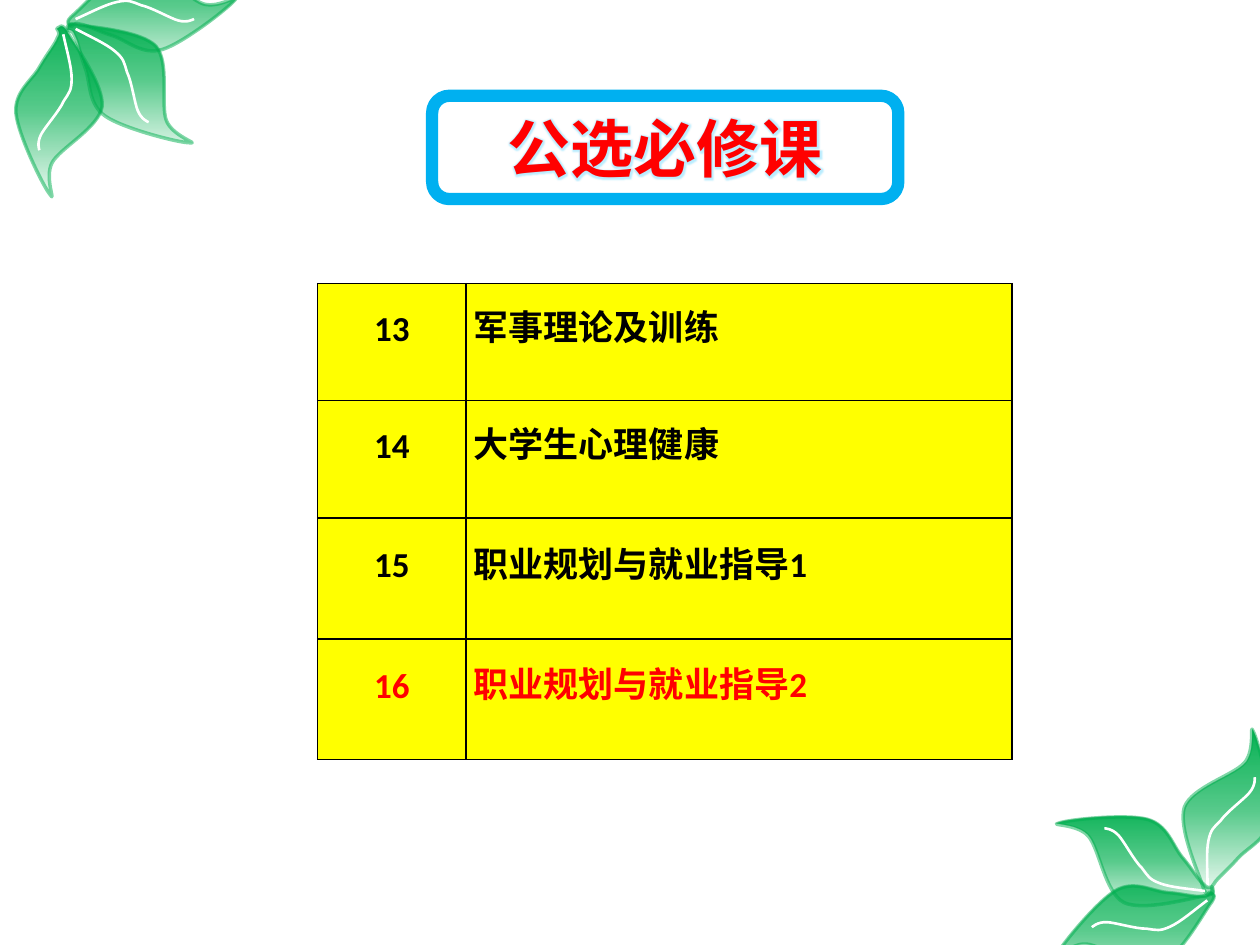
from math import cos, radians, sin

from lxml import etree
from pptx import Presentation
from pptx.dml.color import RGBColor
from pptx.enum.shapes import MSO_SHAPE
from pptx.enum.text import MSO_ANCHOR, MSO_AUTO_SIZE, PP_ALIGN
from pptx.oxml import parse_xml
from pptx.oxml.ns import nsdecls, qn
from pptx.util import Inches, Pt

ROUND = MSO_SHAPE.ROUNDED_RECTANGLE
MIDDLE = MSO_ANCHOR.MIDDLE
GROW = MSO_AUTO_SIZE.SHAPE_TO_FIT_TEXT
LEFT, CENTER = PP_ALIGN.LEFT, PP_ALIGN.CENTER

# Content
TITLE = "公选必修课"
ROWS = [
    ("13", "军事理论及训练", "black"),
    ("14", "大学生心理健康", "black"),
    ("15", "职业规划与就业指导1", "black"),
    ("16", "职业规划与就业指导2", "red"),
]
COLS = [1.18, 4.33]
HEIGHTS = [0.93, 0.93, 0.96, 0.96]
COLORS = {
    "black": "000000", "red": "FF0000", "white": "FFFFFF", "green": "00B050",
    "blue": "00B0F0", "yellow": "FFFF00", "glow": "8FE2FF",
}

# Leaf and vein in hundredths of an inch: size, start, then cubic curves
LEAF = ((76, 141), (19, 129), [
    (15, 117, 0, 83, 5, 67), (11, 51, 44, 42, 53, 32),
    (62, 22, 57, -1, 60, 7), (64, 14, 75, 59, 73, 76),
    (71, 93, 55, 99, 47, 108), (39, 117, 31, 123, 28, 128),
    (24, 132, 28, 135, 27, 135), (25, 135, 22, 140, 19, 129),
])
VEIN = ((40, 86), (1, 86), [
    (1, 72, 0, 59, 2, 50), (4, 41, 6, 40, 12, 34),
    (17, 27, 31, 17, 35, 12), (40, 6, 39, 0, 39, 0),
])
OFFSET = (0.04, 0.16)  # vein centre from leaf centre, before turning
# Centre x, centre y, turn in degrees
LEAVES = [
    (0.48, 0.88, 167.8), (1.05, 0.64, 118.1), (1.2, 0.05, 66.1),
    (9.73, 6.44, 359.6), (9.02, 7.38, 233), (9, 6.84, 278.1),
]


def color(name):
    return RGBColor.from_string(COLORS[name])


def curve(shapes, form, x, y, turn, line, width, closed):
    """Draw a curved outline centred on x, y."""
    (w, h), start, bends = form
    pen = shapes.build_freeform(0, 0, scale=Inches(0.01))
    pen.add_line_segments([(w, 0), (w, h), (0, h)])
    shape = pen.convert_to_shape()
    track = next(shape.element.iter(qn("a:path")))
    for step in list(track):
        track.remove(step)

    def add(tag, nums):
        step = etree.SubElement(track, qn(tag))
        for px, py in zip(nums[::2], nums[1::2]):
            etree.SubElement(step, qn("a:pt"), x=str(px), y=str(py))

    add("a:moveTo", start)
    for bend in bends:
        add("a:cubicBezTo", bend)
    if closed:
        add("a:close", ())
    shape.left, shape.top = Inches(x - w / 200), Inches(y - h / 200)
    shape.rotation = turn
    shape.shadow.inherit = False
    shape.fill.background()
    shape.line.color.rgb = color(line)
    shape.line.width = Pt(width)
    return shape


def fade(shape):
    """Green fill that fades downwards; the outline is half clear."""
    stops = "".join(
        f'<a:gs pos="{pos}"><a:srgbClr val="{COLORS["green"]}">'
        f'<a:alpha val="{alpha}"/></a:srgbClr></a:gs>'
        for pos, alpha in [(0, 100000), (50000, 65000), (100000, 0)])
    fill = parse_xml(
        f'<a:gradFill {nsdecls("a")} rotWithShape="0"><a:gsLst>{stops}</a:gsLst>'
        '<a:lin ang="5400000" scaled="0"/></a:gradFill>')
    props = shape.element.spPr
    props.replace(props.find(qn("a:noFill")), fill)
    tint = props.find(qn("a:ln")).find(".//" + qn("a:srgbClr"))
    etree.SubElement(tint, qn("a:alpha"), val="50000")


def style(para, size, font, name, align):
    para.alignment = align
    run = para.runs[0]
    run.font.size, run.font.name, run.font.bold = Pt(size), font, True
    run.font.color.rgb = color(name)
    return run


def border(cell):
    props = cell._tc.get_or_add_tcPr()
    for spot, side in enumerate("LRTB"):
        props.insert(spot, parse_xml(
            f'<a:ln{side} {nsdecls("a")} w="12700"><a:solidFill>'
            f'<a:srgbClr val="{COLORS["black"]}"/></a:solidFill></a:ln{side}>'))


deck = Presentation()
deck.slide_width, deck.slide_height = Inches(10), Inches(7.5)
slide = deck.slides.add_slide(deck.slide_layouts[6])
shapes = slide.shapes

# Leaves in two corners
for x, y, turn in LEAVES:
    fade(curve(shapes, LEAF, x, y, turn, "green", 2, True))
    c, s = cos(radians(turn)), sin(radians(turn))
    dx, dy = OFFSET
    curve(shapes, VEIN, x + dx * c - dy * s, y + dx * s + dy * c,
          turn, "white", 1.5, False)

# Title frame
frame = shapes.add_shape(ROUND, Inches(3.43), Inches(0.76), Inches(3.7), Inches(0.82))
frame.shadow.inherit = False
frame.fill.background()
frame.line.color.rgb = color("blue")
frame.line.width = Pt(7)
text = frame.text_frame
text.text = TITLE
text.auto_size = GROW
text.vertical_anchor = MIDDLE
run = style(text.paragraphs[0], 36, "Noto Sans CJK SC", "red", CENTER)
props = run.font._element
props.find(qn("a:latin")).addprevious(parse_xml(
    f'<a:effectLst {nsdecls("a")}><a:glow rad="50800">'
    f'<a:srgbClr val="{COLORS["glow"]}"><a:alpha val="60000"/></a:srgbClr>'
    '</a:glow></a:effectLst>'))
props.find(qn("a:latin")).addnext(parse_xml(
    f'<a:ea {nsdecls("a")} typeface="Noto Sans CJK SC"/>'))

# Course table
table = shapes.add_table(len(ROWS), len(COLS), Inches(2.52), Inches(2.25),
                         Inches(sum(COLS)), Inches(sum(HEIGHTS))).table
table.first_row = table.horz_banding = False
for col, width in zip(table.columns, COLS):
    col.width = Inches(width)
for row, height, (num, course, name) in zip(table.rows, HEIGHTS, ROWS):
    row.height = Inches(height)
    for cell, word, align in zip(row.cells, (num, course), (CENTER, LEFT)):
        cell.text_frame.text = word
        cell.vertical_anchor = MIDDLE
        cell.margin_left = cell.margin_right = Inches(0.06)
        cell.margin_top = cell.margin_bottom = 0
        cell.fill.solid()
        cell.fill.fore_color.rgb = color("yellow")
        border(cell)
        para = cell.text_frame.paragraphs[0]
        para.line_spacing = Pt(10)
        style(para, 20, "Calibri", name, align)

deck.save("out.pptx")
